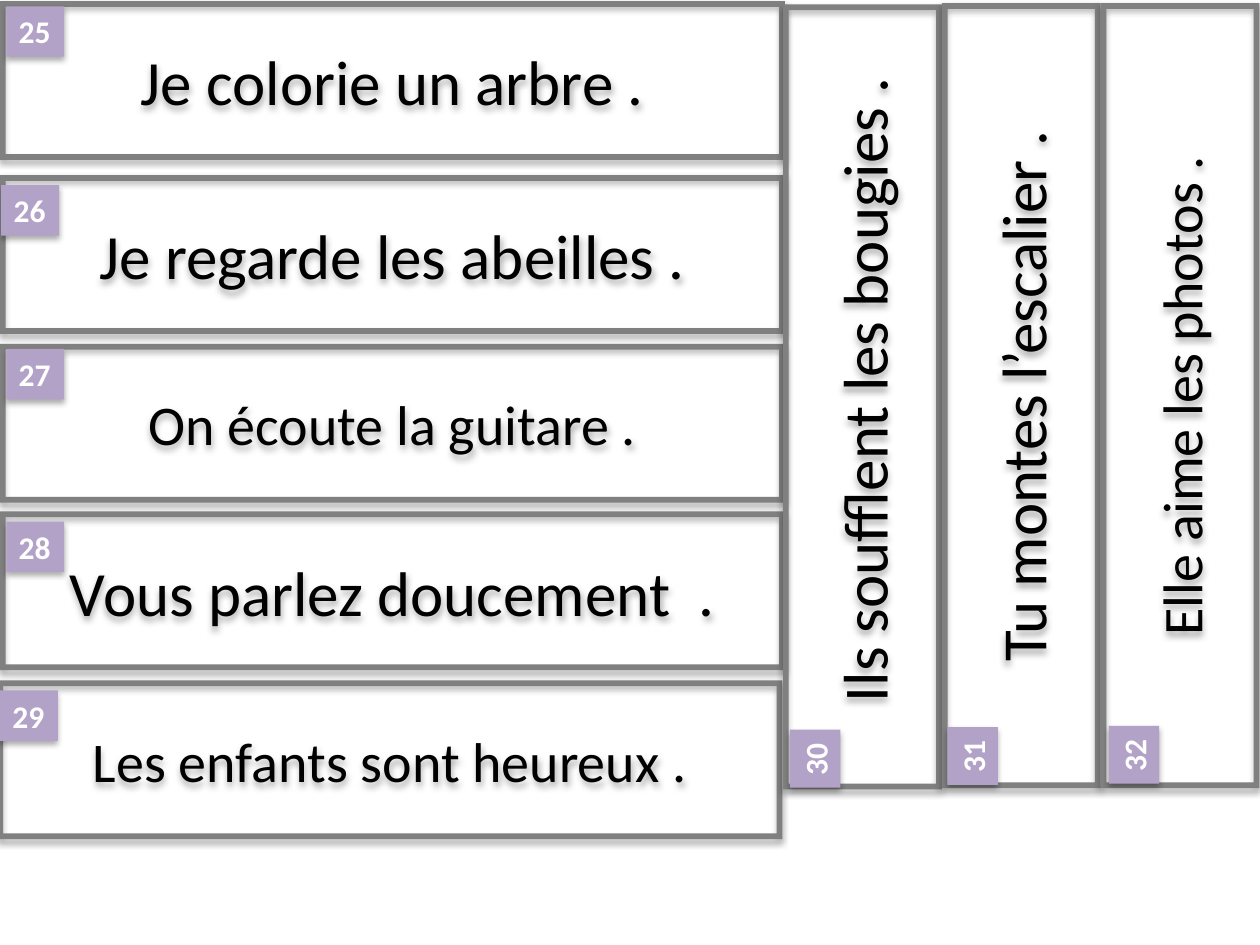
"""Build a slide of numbered French sentence strips, five across and three upright."""
import pptx
import pptx.dml.color
import pptx.enum.shapes
import pptx.enum.text
import pptx.oxml
import pptx.util

Pt = pptx.util.Pt
MSO_SHAPE = pptx.enum.shapes.MSO_SHAPE
MSO_ANCHOR = pptx.enum.text.MSO_ANCHOR
PP_ALIGN = pptx.enum.text.PP_ALIGN

THEME = {
    "font": "Calibri",
    "frame": "808080",
    "badge": "B3A2C7",
    "sentence": "000000",
    "number": "FFFFFF",
    "large": 36,
    "medium": 32,
    "small": 18,
}
SHADOW = (
    '<a:effectLst xmlns:a="http://schemas.openxmlformats.org/drawingml/2006/main">'
    '<a:outerShdw blurRad="44450" dist="27940" dir="5400000" rotWithShape="0">'
    '<a:srgbClr val="000000"><a:alpha val="32000"/></a:srgbClr>'
    "</a:outerShdw></a:effectLst>"
)
STRIP_WIDTH, STRIP_HEIGHT = 448.56, 90.72
BADGE_WIDTH, BADGE_HEIGHT = 33.12, 28.8
UPRIGHT_LEFT = 268.56


def add_block(kind, box, rotation, fill, text, size, color):
    """Add a filled, shadowed shape carrying one line of text."""
    shape = slide.shapes.add_shape(kind, *map(Pt, box))
    shape.rotation = rotation
    shape.fill.solid()
    shape.fill.fore_color.rgb = pptx.dml.color.RGBColor.from_string(THEME[fill])
    shape.line.fill.background()
    shape.shadow.inherit = False
    properties = shape._element.spPr
    properties.replace(properties.effectLst, pptx.oxml.parse_xml(SHADOW))
    paragraph = shape.text_frame.paragraphs[0]
    paragraph.text = text
    font = paragraph.runs[0].font
    font.name = THEME["font"]
    font.size = Pt(THEME[size])
    font.color.rgb = pptx.dml.color.RGBColor.from_string(THEME[color])
    return shape


presentation = pptx.Presentation()
presentation.slide_width, presentation.slide_height = Pt(720), Pt(540)
slide = presentation.slides.add_slide(presentation.slide_layouts[6])

rows = [
    ("Je colorie un arbre .", "large", 0, 0.72, 3.6, 3.6),
    ("Je regarde les abeilles .", "large", 0, 100.08, 0.72, 105.84),
    ("On écoute la guitare .", "medium", 0, 196.56, 3.6, 199.44),
    ("Vous parlez doucement  .", "large", 0, 292.32, 3.6, 298.08),
    ("Les enfants sont heureux .", "medium", -1.44, 388.8, 0, 394.56),
]
columns = [
    (" Ils soufflent les bougies .", "large", 181.44, 449.28, 419.04),
    ("Tu montes l’escalier .", "large", 180.72, 539.28, 417.6),
    ("Elle aime les photos .", "medium", 180.72, 631.44, 416.88),
]
strips = [(*row, 0) for row in rows]
for index, (text, size, top, badge_left, badge_top) in enumerate(columns):
    left = UPRIGHT_LEFT + index * STRIP_HEIGHT
    strips.append((text, size, left, top, badge_left, badge_top, 270))

for text, size, left, top, _, _, rotation in strips:
    box = (left, top, STRIP_WIDTH, STRIP_HEIGHT)
    strip = add_block(MSO_SHAPE.FRAME, box, rotation, "frame", text, size, "sentence")
    strip.adjustments[0] = 0.036
    strip.text_frame.word_wrap = True
    strip.text_frame.vertical_anchor = MSO_ANCHOR.MIDDLE
    strip.text_frame.paragraphs[0].alignment = PP_ALIGN.CENTER

for number, (_, _, _, _, left, top, rotation) in enumerate(strips, start=25):
    box = (left, top, BADGE_WIDTH, BADGE_HEIGHT)
    badge = add_block(MSO_SHAPE.RECTANGLE, box, rotation, "badge", str(number), "small", "number")
    badge.text_frame.word_wrap = False
    badge.text_frame.auto_size = pptx.enum.text.MSO_AUTO_SIZE.SHAPE_TO_FIT_TEXT
    badge.text_frame.vertical_anchor = MSO_ANCHOR.TOP
    badge.text_frame.paragraphs[0].alignment = PP_ALIGN.LEFT
    badge.text_frame.paragraphs[0].runs[0].font.bold = True

presentation.save("out.pptx")
